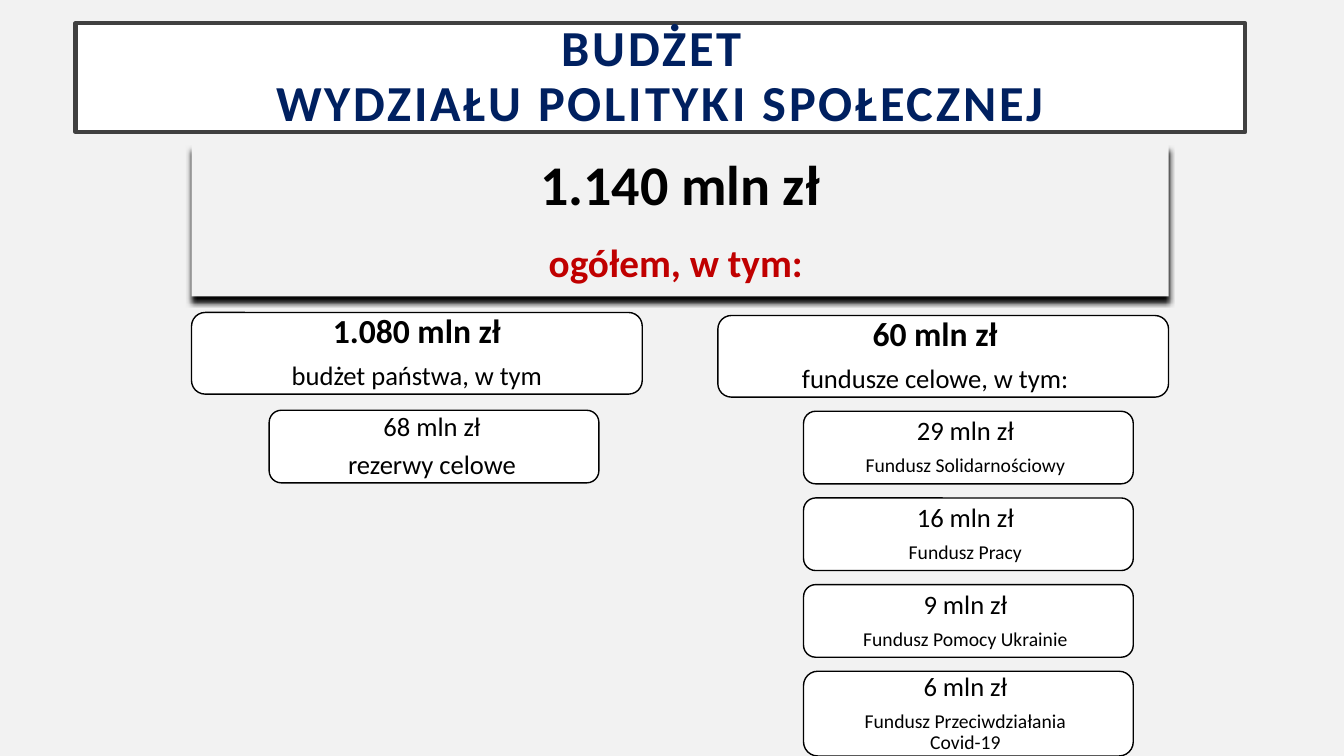
from lxml import etree
from pptx import Presentation
from pptx.dml.color import RGBColor
from pptx.enum import shapes, text
from pptx.oxml.ns import qn
from pptx.util import Inches, Pt

WHITE = RGBColor(0xFF, 0xFF, 0xFF)
BLACK = RGBColor(0, 0, 0)
GREY = RGBColor(0xF2, 0xF2, 0xF2)
DARK = RGBColor(0x40, 0x40, 0x40)
NAVY = RGBColor(0x00, 0x20, 0x60)
RED = RGBColor(0xC0, 0x00, 0x00)
FONT = "Calibri"

TITLE = "BUDŻET \vWYDZIAŁU POLITYKI SPOŁECZNEJ"
TOTAL = ("1.140 mln zł", "ogółem, w tym: ")
# amount, label, left, top, shift of the text box from the card's centre
SOURCES = [
    ("1.080 mln zł", "budżet państwa, w tym", 1.9, 3.1, 0),
    ("60 mln zł", "fundusze celowe, w tym:", 7.12, 3.13, -0.08),
]
RESERVE = ("68 mln zł", "rezerwy celowe")
FUNDS = [
    ("29 mln zł", "Fundusz Solidarnościowy"),
    ("16 mln zł", "Fundusz Pracy"),
    ("9 mln zł", "Fundusz Pomocy Ukrainie"),
    ("6 mln zł", "Fundusz Przeciwdziałania Covid-19"),
]
SOURCE_SIZE, SOURCE_TEXT = (4.47, 0.81), (4.4, 0.73)
ITEM_W, ITEM_H, LAST_H = 3.27, 0.72, 0.84
FUND_LEFT, FUND_TOP, FUND_STEP = 7.97, 4.08, 0.86


def add_text(tf, content, first=False, size=19, color=BLACK, bold=False,
             line=None, before=None, after=None, after_pct=None, tracking=None):
    """Write one centred paragraph into a text frame."""
    p = tf.paragraphs[0] if first else tf.add_paragraph()
    p.text = content
    p.alignment = text.PP_ALIGN.CENTER
    p.line_spacing = line
    if before is not None:
        p.space_before = Pt(before)
    if after is not None:
        p.space_after = Pt(after)
    if after_pct:
        spacing = etree.SubElement(p._p.get_or_add_pPr(), qn("a:spcAft"))
        etree.SubElement(spacing, qn("a:spcPct"), val=str(after_pct * 1000))
    for r in p.runs:
        r.font.name, r.font.size, r.font.bold = FONT, Pt(size), bold
        r.font.color.rgb = color
        if tracking:
            r._r.get_or_add_rPr().set("spc", str(tracking * 100))


def set_frame(sp, anchor, side, top):
    tf = sp.text_frame
    tf.word_wrap = True
    tf.vertical_anchor = anchor
    tf.margin_left = tf.margin_right = Inches(side)
    tf.margin_top = tf.margin_bottom = Inches(top)
    return tf


def add_box(parent, kind, left, top, width, height, fill, line=None, weight=1):
    sp = parent.add_shape(kind, Inches(left), Inches(top), Inches(width), Inches(height))
    sp.shadow.inherit = False
    sp.fill.solid()
    sp.fill.fore_color.rgb = fill
    if line is None:
        sp.line.fill.background()
    else:
        sp.line.color.rgb = line
        sp.line.width = Pt(weight)
    return sp


def add_shadow(sp, blur, distance, angle, alpha):
    effects = sp._element.spPr.find(qn("a:effectLst"))
    shadow = etree.SubElement(effects, qn("a:outerShdw"), blurRad=str(Pt(blur)),
                              dist=str(Pt(distance)), dir=str(angle * 60000),
                              algn="t", rotWithShape="0")
    color = etree.SubElement(shadow, qn("a:srgbClr"), val="000000")
    etree.SubElement(color, qn("a:alpha"), val=str(alpha * 1000))


def add_card(s, amount, label, box, text_size, shift=0, amount_size=19,
             label_size=19, bold=False):
    """Group a rounded card with its centred two-line text."""
    left, top, width, height = box
    text_w, text_h = text_size
    group = s.shapes.add_group_shape().shapes
    add_box(group, shapes.MSO_SHAPE.ROUNDED_RECTANGLE, *box, WHITE, BLACK)
    tb = group.add_textbox(Inches(left + (width - text_w) / 2 + shift),
                           Inches(top + (height - text_h) / 2),
                           Inches(text_w), Inches(text_h))
    tf = set_frame(tb, text.MSO_ANCHOR.MIDDLE, 0.08, 0.08)
    add_text(tf, amount, first=True, size=amount_size, bold=bold, line=0.9, after_pct=35)
    add_text(tf, label, size=label_size, line=0.9, after_pct=35)


def main():
    prs = Presentation()
    prs.slide_width, prs.slide_height = Inches(13.33), Inches(7.5)
    s = prs.slides.add_slide(prs.slide_layouts[6])
    s.background.fill.solid()
    s.background.fill.fore_color.rgb = GREY

    rect = shapes.MSO_SHAPE.RECTANGLE
    title = add_box(s.shapes, rect, 0.75, 0.23, 11.6, 1.08, WHITE, DARK, 3)
    tf = set_frame(title, text.MSO_ANCHOR.MIDDLE, 0.3, 0.2)
    add_text(tf, TITLE, first=True, size=36, color=NAVY, bold=True, line=0.9, tracking=2)

    total = add_box(s.shapes, rect, 1.9, 1.43, 9.69, 1.51, GREY)
    add_shadow(total, blur=4, distance=4, angle=90, alpha=97)
    tf = set_frame(total, text.MSO_ANCHOR.TOP, 0.1, 0.05)
    add_text(tf, TOTAL[0], first=True, size=40, bold=True, before=10, after=6)
    add_text(tf, TOTAL[1], size=28, color=RED, bold=True, before=10, after=6)

    for amount, label, left, top, shift in SOURCES:
        add_card(s, amount, label, (left, top, *SOURCE_SIZE), SOURCE_TEXT, shift,
                 amount_size=24, bold=True)

    add_card(s, *RESERVE, (2.67, 4.07, ITEM_W, ITEM_H), (2.41, 0.47), -0.02)
    for i, (amount, label) in enumerate(FUNDS):
        last = i == len(FUNDS) - 1
        box = (FUND_LEFT, FUND_TOP + i * FUND_STEP, ITEM_W, LAST_H if last else ITEM_H)
        add_card(s, amount, label, box, (2.41, 0.55 if last else 0.47), -0.03, label_size=14)

    prs.save("out.pptx")


if __name__ == "__main__":
    main()
